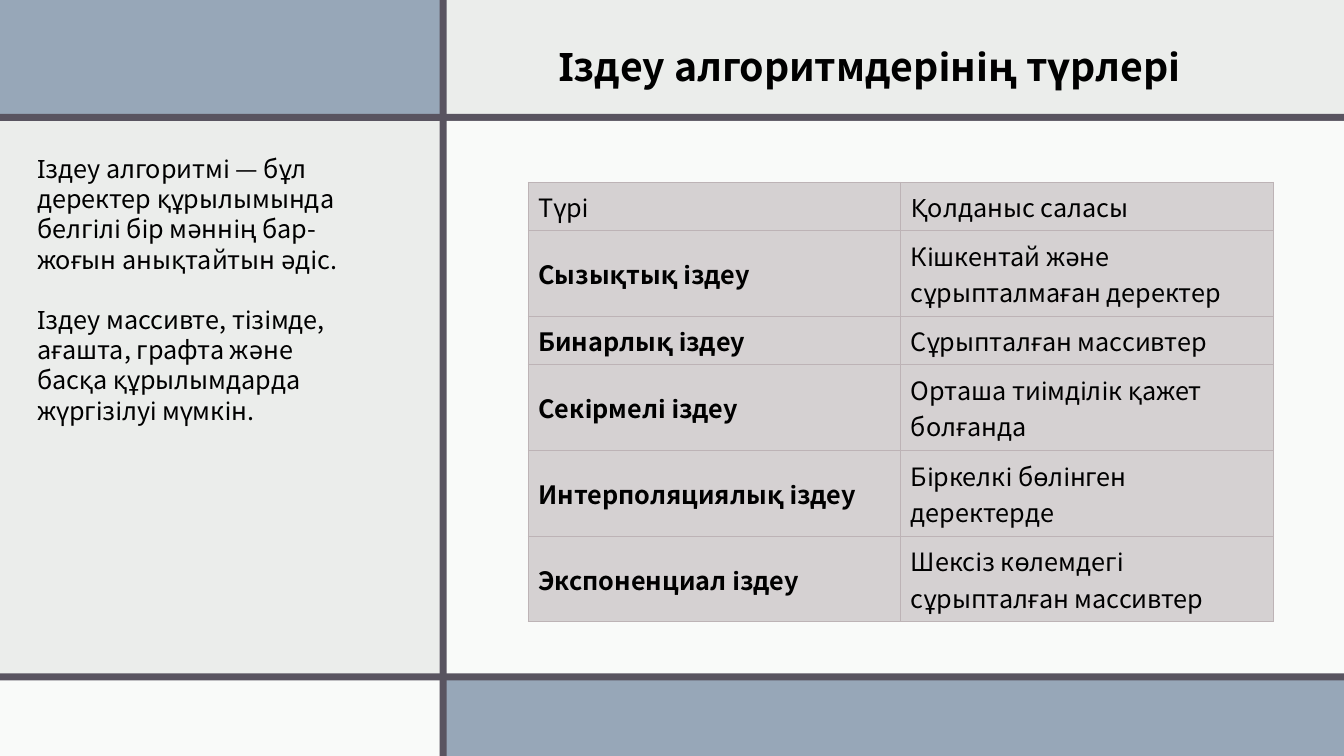
from pptx import Presentation
from pptx.dml.color import RGBColor
from pptx.enum.shapes import MSO_SHAPE
from pptx.enum.text import MSO_ANCHOR, PP_ALIGN
from pptx.oxml import parse_xml
from pptx.oxml.ns import nsdecls
from pptx.util import Inches, Pt

RECT = MSO_SHAPE.RECTANGLE
TOP, MIDDLE = MSO_ANCHOR.TOP, MSO_ANCHOR.MIDDLE
LEFT = PP_ALIGN.LEFT
FONT = "Noto Sans CJK JP"
PALE, BLUE, DARK, WHITE = "EBEDEB", "97A7B8", "595460", "FFFFFF"
CELL, EDGE = "D5D1D2", "BDB3B6"


def color(code):
    return RGBColor.from_string(code)


def style(para, size, pitch, bold=False):
    para.alignment = LEFT
    para.line_spacing = Pt(pitch)
    para.space_before = para.space_after = Pt(0)
    font = para.font
    font.name, font.size, font.bold = FONT, Pt(size), bold
    font.color.rgb = color("000000")


prs = Presentation()
prs.slide_width, prs.slide_height = Inches(13.33), Inches(7.5)
slide = prs.slides.add_slide(prs.slide_layouts[5])
slide.background.fill.solid()
slide.background.fill.fore_color.rgb = color(PALE)

# Panels and dark bars
panels = [
    (0, 0, 4.39, 1.16, BLUE),
    (0, 1.13, 13.33, 0.07, DARK),
    (4.36, 1.2, 8.97, 5.49, WHITE),
    (4.42, 6.72, 8.91, 0.78, BLUE),
    (0, 6.74, 4.36, 0.76, WHITE),
    (0, 6.68, 13.33, 0.07, DARK),
    (4.36, 0, 0.07, 7.5, DARK),
]
for *place, tint in panels:
    panel = slide.shapes.add_shape(RECT, *map(Inches, place))
    panel.shadow.inherit = False
    panel.line.fill.background()
    panel.fill.solid()
    panel.fill.fore_color.rgb = color(tint)
    if tint == WHITE:
        # White panels are 75 % opaque
        alpha = parse_xml(f'<a:alpha {nsdecls("a")} val="75000"/>')
        panel.fill._xPr.find(".//{*}srgbClr").append(alpha)

# Title
title = slide.shapes.title
title.left, title.top = Inches(5.44), Inches(0.37)
title.width, title.height = Inches(6.8), Inches(0.57)
title.text_frame.text = "Іздеу алгоритмдерінің түрлері"
title.text_frame.vertical_anchor = TOP
title.text_frame.word_wrap = True
style(title.text_frame.paragraphs[0], 28, 33.6, True)

# Definition on the left
box = slide.shapes.add_textbox(Inches(0.27), Inches(1.47), Inches(3.32), Inches(2.83))
frame = box.text_frame
frame.word_wrap = True
frame.text = (
    "Іздеу алгоритмі — бұл деректер құрылымында белгілі бір мәннің "
    "бар-жоғын анықтайтын әдіс.\n"
    "Іздеу массивте, тізімде, ағашта, графта және басқа құрылымдарда "
    "жүргізілуі мүмкін."
)
for para in frame.paragraphs:
    style(para, 18, 21.6)
frame.paragraphs[1].space_before = Pt(21.6)

# Table of search types
rows = [
    ("Түрі", "Қолданыс саласы", 0.48),
    ("Сызықтық іздеу", "Кішкентай және сұрыпталмаған деректер", 0.85),
    ("Бинарлық іздеу", "Сұрыпталған массивтер", 0.48),
    ("Секірмелі іздеу", "Орташа тиімділік қажет болғанда", 0.85),
    ("Интерполяциялық іздеу", "Біркелкі бөлінген деректерде", 0.85),
    ("Экспоненциал іздеу", "Шексіз көлемдегі сұрыпталған массивтер", 0.85),
]
table = slide.shapes.add_table(
    len(rows), 2, Inches(5.24), Inches(1.81), Inches(7.39), Inches(4.35)
).table
table.first_row = table.horz_banding = False
for r, (*texts, height) in enumerate(rows):
    table.rows[r].height = Inches(height)
    for c, text in enumerate(texts):
        cell = table.cell(r, c)
        cell.text = text
        cell.vertical_anchor = MIDDLE
        style(cell.text_frame.paragraphs[0], 18, 26, r > 0 and c == 0)
        props = cell._tc.get_or_add_tcPr()
        for side in ("lnL", "lnR", "lnT", "lnB"):
            props.append(parse_xml(
                f'<a:{side} {nsdecls("a")} w="9525"><a:solidFill>'
                f'<a:srgbClr val="{EDGE}"/></a:solidFill></a:{side}>'))
        cell.fill.solid()
        cell.fill.fore_color.rgb = color(CELL)

prs.save("out.pptx")
